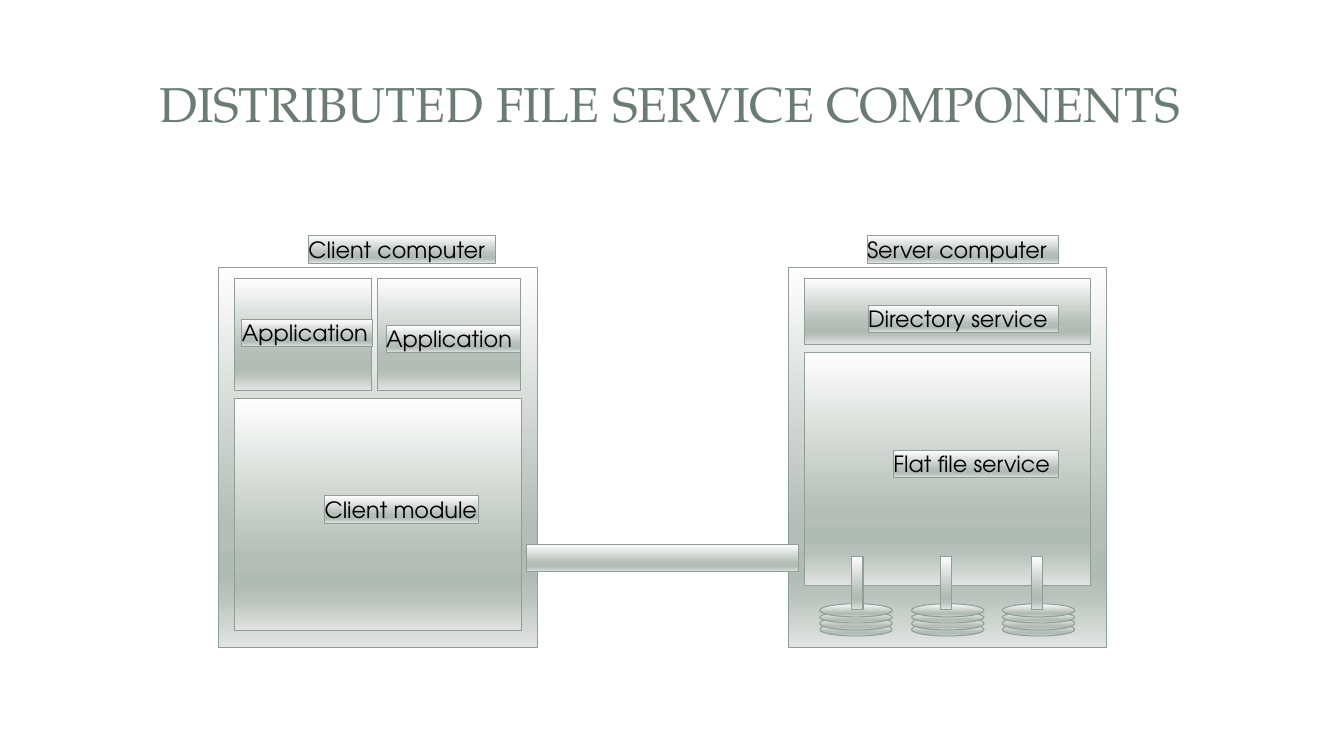
from dataclasses import dataclass

from lxml.etree import SubElement
from pptx import Presentation
from pptx.dml.color import RGBColor
from pptx.enum.shapes import MSO_SHAPE as Shape
from pptx.enum.text import MSO_ANCHOR as Anchor, MSO_AUTO_SIZE as AutoSize, PP_ALIGN as Align
from pptx.oxml.ns import qn
from pptx.shapes.autoshape import Shape as AutoShape
from pptx.slide import Slide
from pptx.text.text import TextFrame
from pptx.util import Inches, Length, Pt

CELL = 0.1
GRADIENT = [(0, "FEFEFE"), (68, "B4BDB7"), (81, "B1BBB5"), (86, "B9C1BC"), (100, "E1E4E2")]
LINE, TITLE_COLOR, TEXT_COLOR = "8F9F96", "6B7D72", "000000"
TITLE_FONT, LABEL_FONT = "TeX Gyre Pagella", "TeX Gyre Adventor"
LABEL_HEIGHT = 2.7


@dataclass(frozen=True)
class Box:
    """A rectangle in grid columns and rows."""
    col: float
    row: float
    cols: float
    rows: float


@dataclass(frozen=True)
class Label:
    """A caption placed relative to its computer."""
    text: str
    col: float
    row: float
    cols: float


@dataclass(frozen=True)
class Computer:
    """A computer whose blocks and labels are relative to its corner."""
    col: float
    blocks: list[Box]
    labels: list[Label]


@dataclass(frozen=True)
class Disk:
    """A stack of platters with a spindle."""
    col: float
    spindle_col: float


COMPUTER_ROW, COMPUTER_COLS, COMPUTER_ROWS = 26.5, 31.6, 37.7
COMPUTERS = [
    Computer(
        21.7,
        [Box(1.6, 13, 28.4, 23.1), Box(1.6, 1.1, 13.6, 11.1), Box(15.7, 1.1, 14.2, 11.1)],
        [
            Label("Client computer", 8.9, -3.1, 18.6),
            Label("Application", 2.3, 5.2, 12.9),
            Label("Application", 16.6, 5.8, 13.3),
            Label("Client module", 10.5, 22.7, 15.3),
        ],
    ),
    Computer(
        78.2,
        [Box(1.6, 8.5, 28.4, 23.1), Box(1.6, 1.1, 28.4, 6.6)],
        [
            Label("Server computer", 7.8, -3.1, 19),
            Label("Flat file service", 10.4, 18.2, 16.4),
            Label("Directory service", 7.9, 3.8, 18.9),
        ],
    ),
]
NETWORK = Box(52.2, 54, 27, 2.7)
DISKS = [Disk(81.3, 84.5), Disk(90.4, 93.3), Disk(99.4, 102.3)]
PLATTERS = [(61.8, 1.3), (61.2, 1.3), (60.7, 1.1), (59.9, 1.3)]


def color(value: str) -> RGBColor:
    """Turn a hex string into a colour."""
    return RGBColor.from_string(value)


def grid(count: float) -> Length:
    """Turn a number of grid cells into a length."""
    return Inches(count * CELL)


def write(tf: TextFrame, text: str, font: str, size: float, hex_color: str) -> None:
    """Set the text of a frame and format its run."""
    tf.text = text
    tf.word_wrap = True
    r = tf.paragraphs[0].runs[0]
    r.font.name, r.font.size, r.font.bold = font, Pt(size), False
    r.font.color.rgb = color(hex_color)


def add_panel(slide: Slide, box: Box, kind: Shape = Shape.RECTANGLE) -> AutoShape:
    """Draw an outlined shape with the vertical gradient."""
    s = slide.shapes.add_shape(kind, grid(box.col), grid(box.row), grid(box.cols), grid(box.rows))
    s.shadow.inherit = False
    s.line.color.rgb = color(LINE)
    s.line.width = Pt(0.75)
    s.fill.gradient()
    s.fill.gradient_angle = 270
    stops = s.element.spPr.find(".//" + qn("a:gsLst"))
    for stop in list(stops):
        stops.remove(stop)
    for percent, value in GRADIENT:
        stop = SubElement(stops, qn("a:gs"), pos=str(percent * 1000))
        SubElement(stop, qn("a:srgbClr"), val=value)
    return s


def add_label(slide: Slide, label: Label, col: float) -> None:
    """Draw a caption on its own small panel."""
    box = Box(col + label.col, COMPUTER_ROW + label.row, label.cols, LABEL_HEIGHT)
    tf = add_panel(slide, box).text_frame
    write(tf, label.text, LABEL_FONT, 16, TEXT_COLOR)
    tf.margin_left = tf.margin_right = tf.margin_top = tf.margin_bottom = 0
    tf.vertical_anchor = Anchor.TOP
    tf.auto_size = AutoSize.SHAPE_TO_FIT_TEXT
    tf.paragraphs[0].alignment = Align.LEFT


def add_computer(slide: Slide, computer: Computer) -> None:
    """Draw a computer with its blocks and labels."""
    add_panel(slide, Box(computer.col, COMPUTER_ROW, COMPUTER_COLS, COMPUTER_ROWS))
    for block in computer.blocks:
        add_panel(slide, Box(computer.col + block.col, COMPUTER_ROW + block.row, block.cols, block.rows))
    for label in computer.labels:
        add_label(slide, label, computer.col)


def add_disk(slide: Slide, disk: Disk) -> None:
    """Draw the platters from the bottom up, then the spindle."""
    for row, rows in PLATTERS:
        add_panel(slide, Box(disk.col, row, 7.2, rows), Shape.OVAL)
    add_panel(slide, Box(disk.spindle_col, 55.2, 1.1, 5.3))


def add_title(slide: Slide, text: str) -> None:
    """Place and format the title placeholder."""
    s = slide.shapes.title
    s.left, s.top, s.width, s.height = grid(6.2), grid(4.5), grid(120.5), grid(11.4)
    tf = s.text_frame
    write(tf, text, TITLE_FONT, 35, TITLE_COLOR)
    tf.vertical_anchor = Anchor.MIDDLE
    tf.auto_size = AutoSize.NONE
    tf.paragraphs[0].alignment = Align.CENTER


def main() -> None:
    """Build and save the slide."""
    prs = Presentation()
    prs.slide_width, prs.slide_height = Inches(13.33), Inches(7.5)
    slide = prs.slides.add_slide(prs.slide_layouts[5])
    add_title(slide, "DISTRIBUTED FILE SERVICE COMPONENTS")
    for computer in COMPUTERS:
        add_computer(slide, computer)
    add_panel(slide, NETWORK)
    for disk in DISKS:
        add_disk(slide, disk)
    prs.save("out.pptx")


if __name__ == "__main__":
    main()
